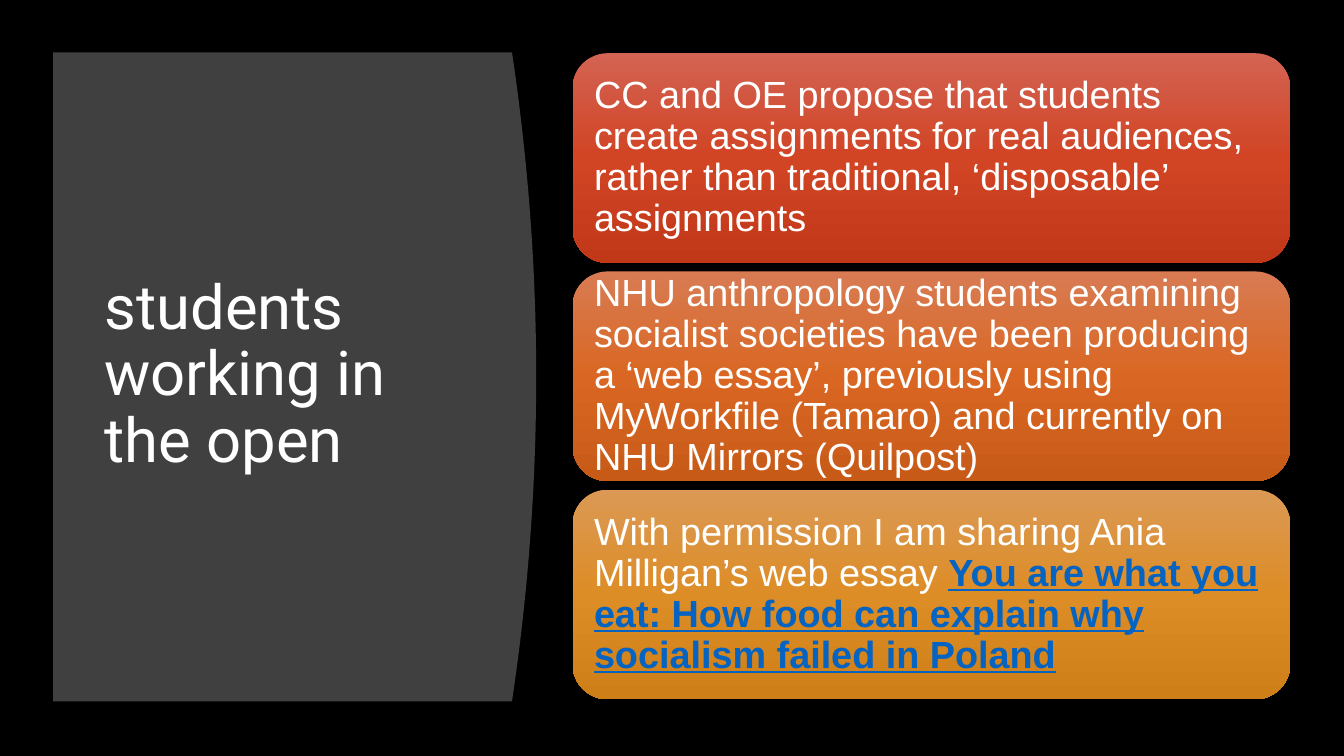
from copy import deepcopy
from dataclasses import dataclass

from pptx import Presentation
from pptx.dml.color import RGBColor
from pptx.enum.shapes import MSO_SHAPE
from pptx.enum.text import MSO_ANCHOR, MSO_AUTO_SIZE, PP_ALIGN
from pptx.oxml.ns import qn
from pptx.util import Pt

ROUND = MSO_SHAPE.ROUNDED_RECTANGLE
MIDDLE = MSO_ANCHOR.MIDDLE
LEFT = PP_ALIGN.LEFT
NO_FIT = MSO_AUTO_SIZE.NONE


@dataclass(frozen=True)
class Theme:
    back: str = "000000"
    panel: str = "404040"
    text: str = "FFFFFF"
    link: str = "0563C1"
    reds: tuple = ("D36353", "D14424", "C13819")
    rusts: tuple = ("D87B53", "D96723", "C85A18")
    golds: tuple = ("DB9955", "DD8D26", "CE7F18")
    head_font: str = "Roboto"
    body_font: str = "Arial"
    head_size: int = 44
    body_size: int = 27


THEME = Theme()
TITLE = "students working in the open"
PLAIN = {"bold": False, "underline": False}
STRONG = {"bold": True, "underline": True}
CARDS = [
    (THEME.reds, [
        ("CC and OE propose that students create assignments for real "
         "audiences, rather than traditional, ‘disposable’ assignments",
         THEME.text, PLAIN)]),
    (THEME.rusts, [
        ("NHU anthropology students examining socialist societies have been "
         "producing a ‘web essay’, previously using MyWorkfile (Tamaro) and "
         "currently on NHU Mirrors (Quilpost)",
         THEME.text, PLAIN)]),
    (THEME.golds, [
        ("With permission I am sharing Ania Milligan’s web essay ",
         THEME.text, PLAIN),
        ("You are what you eat: How food can explain why socialism failed "
         "in Poland", THEME.link, STRONG)]),
]


def paint(fill, color):
    fill.solid()
    fill.fore_color.rgb = RGBColor.from_string(color)


def shade(shape, colors):
    """Fill the shape from top to bottom with evenly spaced colours."""
    fill = shape.fill
    fill.gradient()
    fill.gradient_angle = 270
    stops = next(shape.element.iter(qn("a:gsLst")))
    while len(stops) < len(colors):
        stops.insert(1, deepcopy(stops[0]))
    for i, (stop, color) in enumerate(zip(fill.gradient_stops, colors)):
        stop.position = i / (len(colors) - 1)
        stop.color.rgb = RGBColor.from_string(color)


def write(frame, runs, font, size, inset):
    """Replace the frame's text with one left-aligned paragraph of runs."""
    layout = {"word_wrap": True, "auto_size": NO_FIT,
              "vertical_anchor": MIDDLE}
    for side in ("left", "top", "right", "bottom"):
        layout[f"margin_{side}"] = Pt(inset)
    for name, value in layout.items():
        setattr(frame, name, value)
    para = frame.paragraphs[0]
    para.alignment = LEFT
    para.line_spacing = 0.9
    for words, color, style in runs:
        run = para.add_run()
        run.text = words
        for name, value in {"name": font, "size": Pt(size), **style}.items():
            setattr(run.font, name, value)
        run.font.color.rgb = RGBColor.from_string(color)


def add_panel(slide, left, top, width, height):
    """Draw the panel with a bowed right side and put the title on it."""
    bulge, steps = 17.3, 40
    edge = []
    for i in range(steps + 1):
        part = i / steps
        bow = bulge * (2 * part - 1) ** 2
        edge.append((Pt(left + width - bow), Pt(top + height * part)))
    pen = slide.shapes.build_freeform(Pt(left), Pt(top))
    pen.add_line_segments(edge + [(Pt(left), Pt(top + height))], close=True)
    panel = pen.convert_to_shape()
    panel.shadow.inherit = False
    paint(panel.fill, THEME.panel)
    panel.line.fill.background()

    title = slide.shapes.title
    box = {"left": left + 29.5, "top": top + 42.5,
           "width": width - 75.7, "height": height - 86.4}
    for name, value in box.items():
        setattr(title, name, Pt(value))
    # The title placeholder comes first, so lift it above the panel.
    panel.element.addnext(title.element)
    write(title.text_frame, [(TITLE, THEME.text, PLAIN)],
          THEME.head_font, THEME.head_size, 7.2)


def add_cards(slide, left, top, width, height):
    """Stack the cards in equal rows that fill the box."""
    gap = 6.1
    tall = (height - gap * (len(CARDS) - 1)) / len(CARDS)
    for i, (colors, runs) in enumerate(CARDS):
        card = slide.shapes.add_shape(
            ROUND, Pt(left), Pt(top + i * (tall + gap)), Pt(width), Pt(tall))
        card.shadow.inherit = False
        card.line.fill.background()
        shade(card, colors)
        write(card.text_frame, runs, THEME.body_font, THEME.body_size, 8)


def main():
    deck = Presentation()
    deck.slide_width, deck.slide_height = Pt(960), Pt(540)
    slide = deck.slides.add_slide(deck.slide_layouts[5])
    paint(slide.background.fill, THEME.back)
    add_panel(slide, 38, 37.4, 345, 463.7)
    add_cards(slide, 409, 38, 512.6, 461.5)
    deck.save("out.pptx")


if __name__ == "__main__":
    main()
